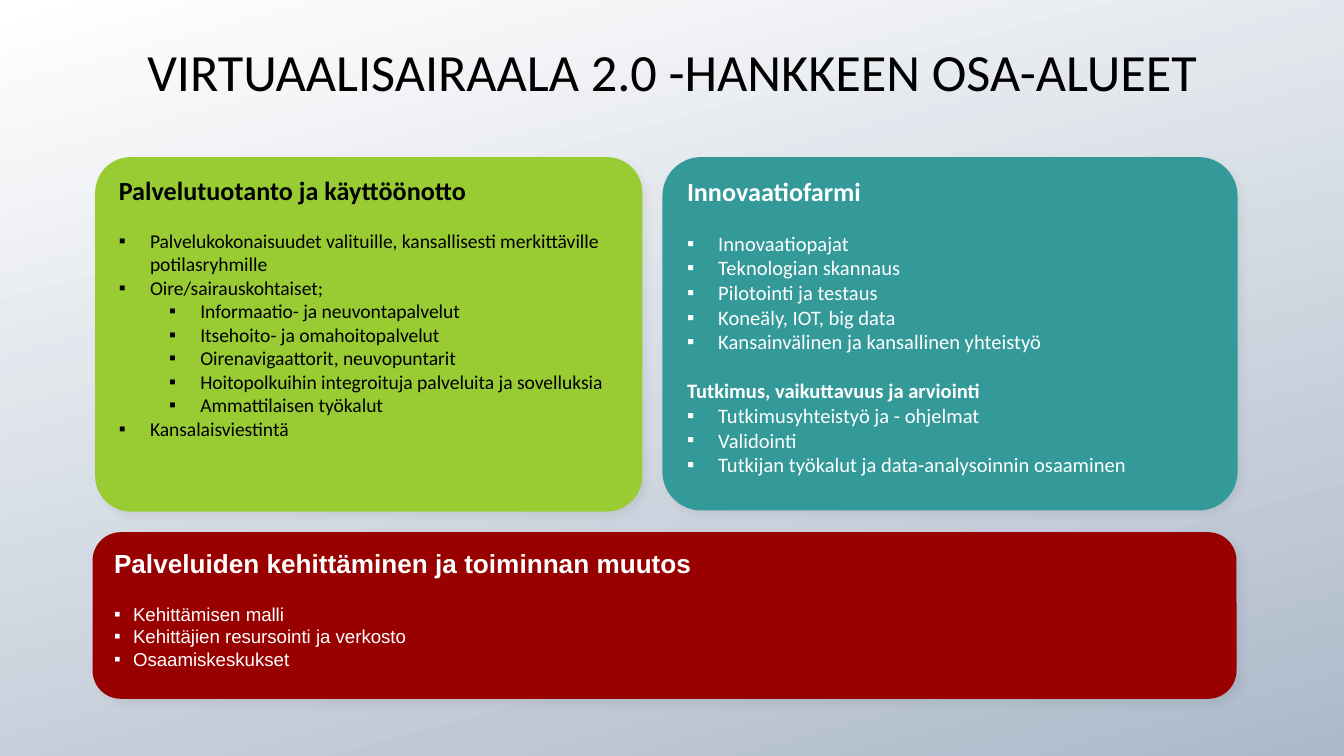
from dataclasses import dataclass

import pptx
import pptx.dml.color
import pptx.enum.shapes
import pptx.enum.text
import pptx.oxml.ns
import pptx.util
from lxml import etree
from pptx.util import Cm, Pt

HEADING_SIZE = 14


@dataclass
class Line:
    text: str
    level: int = 0
    heading: bool = False
    gap: float = 0


@dataclass
class Panel:
    left: float
    top: float
    width: float
    height: float
    corner: float
    fill: str
    ink: str
    font: str
    size: float
    indent: float
    lines: list[Line]


def rgb(value: str) -> pptx.dml.color.RGBColor:
    return pptx.dml.color.RGBColor.from_string(value)


def add_element(parent, tag: str, **attributes):
    return etree.SubElement(
        parent, pptx.oxml.ns.qn(tag), {key: str(value) for key, value in attributes.items()}
    )


def add_run(paragraph, text: str, font: str, size: float, color: str, bold: bool = False) -> None:
    run = paragraph.add_run()
    run.text = text
    run.font.name = font
    run.font.size = Pt(size)
    run.font.bold = bold
    run.font.color.rgb = rgb(color)


def add_bullet(paragraph, left: float, hanging: float) -> None:
    properties = paragraph._p.get_or_add_pPr()
    properties.set("marL", str(Cm(left)))
    properties.set("indent", str(-Cm(hanging)))
    add_element(properties, "a:buFont", typeface="Arial")
    add_element(properties, "a:buChar", char="▪")


def add_soft_shadow(shape) -> None:
    shape.shadow.inherit = False
    effects = shape._element.spPr.find(pptx.oxml.ns.qn("a:effectLst"))
    shadow = add_element(effects, "a:outerShdw", blurRad=Pt(4), dist=Pt(3),
                         dir=45 * 60000, algn="tl", rotWithShape=0)
    color = add_element(shadow, "a:srgbClr", val="000000")
    add_element(color, "a:alpha", val=6000)


def draw_panel(slide, panel: Panel) -> None:
    box = slide.shapes.add_shape(
        pptx.enum.shapes.MSO_SHAPE.ROUNDED_RECTANGLE,
        Cm(panel.left), Cm(panel.top), Cm(panel.width), Cm(panel.height),
    )
    box.adjustments[0] = panel.corner
    box.fill.solid()
    box.fill.fore_color.rgb = rgb(panel.fill)
    box.line.fill.background()
    add_soft_shadow(box)

    frame = box.text_frame
    frame.word_wrap = True
    frame.vertical_anchor = pptx.enum.text.MSO_ANCHOR.TOP
    for index, line in enumerate(panel.lines):
        paragraph = frame.paragraphs[0] if index == 0 else frame.add_paragraph()
        paragraph.alignment = pptx.enum.text.PP_ALIGN.LEFT
        paragraph.level = line.level
        if line.gap:
            paragraph.space_before = Pt(line.gap)
        if not line.heading:
            add_bullet(paragraph, panel.indent + 0.95 * line.level, panel.indent)
        size = HEADING_SIZE if index == 0 else panel.size
        add_run(paragraph, line.text, panel.font, size, panel.ink, line.heading)


def draw_title(slide, text: str) -> None:
    title = slide.shapes.add_textbox(Cm(1.75), Cm(0.76), Cm(21.9), Cm(1.7))
    title.text_frame.word_wrap = True
    paragraph = title.text_frame.paragraphs[0]
    paragraph.alignment = pptx.enum.text.PP_ALIGN.CENTER
    paragraph.line_spacing = 0.9
    add_run(paragraph, text, "Calibri", 28, "000000")


def fill_background(slide, start: str, end: str) -> None:
    fill = slide.background.fill
    fill.gradient()
    fill.gradient_angle = 285
    for stop, color in zip(fill.gradient_stops, (start, end)):
        stop.color.rgb = rgb(color)


DEVELOPMENT = Panel(
    1.75, 10.06, 21.62, 3.15, 0.17, "990000", "FFFFFF", "Arial", 10, 0.36,
    [
        Line("Palveluiden kehittäminen ja toiminnan muutos", heading=True),
        Line("Kehittämisen malli", gap=13),
        Line("Kehittäjien resursointi ja verkosto"),
        Line("Osaamiskeskukset"),
    ],
)
INNOVATION = Panel(
    12.52, 2.97, 10.87, 6.68, 0.11, "339999", "FFFFFF", "Calibri", 11, 0.59,
    [
        Line("Innovaatiofarmi", heading=True),
        Line("Innovaatiopajat", gap=13),
        Line("Teknologian skannaus"),
        Line("Pilotointi ja testaus"),
        Line("Koneäly, IOT, big data"),
        Line("Kansainvälinen ja kansallinen yhteistyö"),
        Line("Tutkimus, vaikuttavuus ja arviointi", heading=True, gap=13),
        Line("Tutkimusyhteistyö ja - ohjelmat"),
        Line("Validointi"),
        Line("Tutkijan työkalut ja data-analysoinnin osaaminen"),
    ],
)
SERVICES = Panel(
    1.8, 2.97, 10.34, 6.7, 0.1, "99CC33", "000000", "Calibri", 10.5, 0.59,
    [
        Line("Palvelutuotanto ja käyttöönotto", heading=True),
        Line("Palvelukokonaisuudet valituille, kansallisesti merkittäville potilasryhmille", gap=12.5),
        Line("Oire/sairauskohtaiset;"),
        Line("Informaatio- ja neuvontapalvelut", level=1),
        Line("Itsehoito- ja omahoitopalvelut", level=1),
        Line("Oirenavigaattorit, neuvopuntarit", level=1),
        Line("Hoitopolkuihin integroituja palveluita ja sovelluksia", level=1),
        Line("Ammattilaisen työkalut", level=1),
        Line("Kansalaisviestintä"),
    ],
)


def main() -> None:
    presentation = pptx.Presentation()
    presentation.slide_width = Cm(25.4)
    presentation.slide_height = Cm(14.29)
    slide = presentation.slides.add_slide(presentation.slide_layouts[6])
    fill_background(slide, "FFFFFF", "ADB9CA")
    draw_title(slide, "VIRTUAALISAIRAALA 2.0 -HANKKEEN OSA-ALUEET")
    for panel in (DEVELOPMENT, INNOVATION, SERVICES):
        draw_panel(slide, panel)
    presentation.save("out.pptx")


if __name__ == "__main__":
    main()
